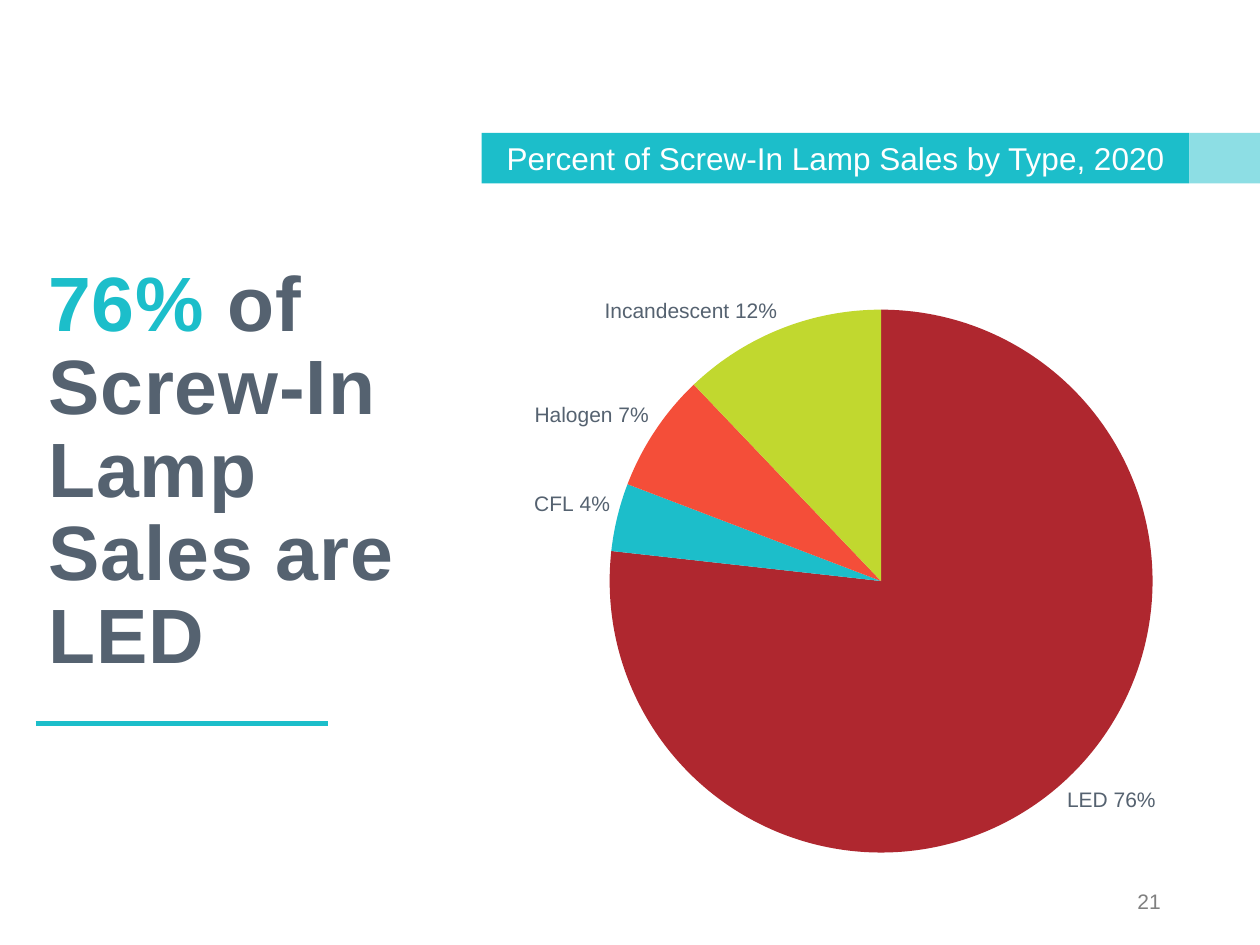
from lxml.etree import SubElement
from pptx import Presentation
from pptx.chart.data import CategoryChartData
from pptx.dml.color import RGBColor
from pptx.enum.chart import XL_CHART_TYPE, XL_LABEL_POSITION
from pptx.enum.shapes import MSO_CONNECTOR, MSO_SHAPE
from pptx.enum.text import MSO_ANCHOR, MSO_AUTO_SIZE, PP_ALIGN
from pptx.oxml import parse_xml
from pptx.oxml.ns import qn
from pptx.util import Cm, Pt

TEAL, SLATE, WHITE, GRAY, BLACK = "1CBECA", "556270", "FFFFFF", "808080", "000000"
LAMPS = [
    ("LED", 0.76, "AF272F"),
    ("CFL", 0.04, TEAL),
    ("Halogen", 0.07, "F44E39"),
    ("Incandescent", 0.12, "C1D82F"),
]


def color(value):
    return RGBColor.from_string(value)


def cm(*lengths):
    return [Cm(length) for length in lengths]


class Page:
    font = "Arial"

    def __init__(self, deck):
        self.slide = deck.slides.add_slide(deck.slide_layouts[5])
        self.shapes = self.slide.shapes

    def style(self, font, size, fill, bold=False):
        font.name, font.size, font.bold = self.font, Pt(size), bold
        font.color.rgb = color(fill)

    def span(self, para, text, size, fill, bold=False):
        span = para.add_run()
        span.text = text
        self.style(span.font, size, fill, bold)
        return span

    def frame(self, box, align):
        frame = box.text_frame
        frame.word_wrap = True
        frame.auto_size = MSO_AUTO_SIZE.NONE
        frame.vertical_anchor = MSO_ANCHOR.MIDDLE
        para = frame.paragraphs[0]
        para.alignment = align
        return para

    def title(self, place, parts):
        box = self.shapes.title
        box.left, box.top, box.width, box.height = cm(*place)
        para = self.frame(box, PP_ALIGN.LEFT)
        para.line_spacing = 0.9
        para.space_before = Pt(0)
        for text, fill in parts:
            span = self.span(para, text, 44, fill, bold=True)
            span._r.get_or_add_rPr().set("spc", "50")

    def bar(self, place, fill, text="", alpha=None):
        box = self.shapes.add_shape(MSO_SHAPE.RECTANGLE, *cm(*place))
        box.shadow.inherit = False
        box.fill.solid()
        box.fill.fore_color.rgb = color(fill)
        box.line.fill.background()
        if alpha is not None:
            tint = box._element.spPr.find(".//" + qn("a:srgbClr"))
            SubElement(tint, qn("a:alpha")).set("val", str(alpha * 1000))
        if text:
            self.span(self.frame(box, PP_ALIGN.CENTER), text, 18, WHITE)

    def rule(self, ends, fill, width):
        line = self.shapes.add_connector(MSO_CONNECTOR.STRAIGHT, *cm(*ends))
        line.line.color.rgb = color(fill)
        line.line.width = Pt(width)
        SubElement(line._element.spPr, qn("a:effectLst"))

    def text(self, place, text, size, fill, align):
        box = self.shapes.add_textbox(*cm(*place))
        self.span(self.frame(box, align), text, size, fill)

    def pie(self, place, rows, plot_area):
        data = CategoryChartData(number_format="0%")
        data.categories = [name for name, _, _ in rows]
        data.add_series("Series 1", [value for _, value, _ in rows])
        chart = self.shapes.add_chart(XL_CHART_TYPE.PIE, *cm(*place), data).chart
        chart.has_title = chart.has_legend = False
        self.style(chart.font, 10, BLACK)
        plot = chart.plots[0]
        plot.vary_by_categories = True
        plot.has_data_labels = False
        series = plot.series[0]
        labels = series.data_labels
        self.style(labels.font, 12, SLATE)
        labels.show_category_name = labels.show_value = True
        labels.number_format, labels.number_format_is_linked = "0%", False
        labels.position = XL_LABEL_POSITION.OUTSIDE_END

        # Slices and their labels
        for index, (name, value, fill) in enumerate(rows):
            point = series.points[index]
            point.format.fill.solid()
            point.format.fill.fore_color.rgb = color(fill)
            point.format.line.fill.background()
            label = point.data_label
            para = label.text_frame.paragraphs[0]
            self.span(para, f"{name} {value:.0%}", 12, SLATE)
            label.position = XL_LABEL_POSITION.OUTSIDE_END
        for shown in labels._element.iter(qn("c:showCatName")):
            shown.set("val", "1")

        # Fixed plot area, as fractions of the chart
        namespace = "http://schemas.openxmlformats.org/drawingml/2006/chart"
        settings = [("layoutTarget", "inner"), ("xMode", "edge"), ("yMode", "edge")]
        settings += zip("xywh", plot_area)
        items = "".join(f'<c:{tag} val="{value}"/>' for tag, value in settings)
        layout = parse_xml(
            f'<c:layout xmlns:c="{namespace}"><c:manualLayout>{items}'
            "</c:manualLayout></c:layout>"
        )
        area = chart._chartSpace.chart.plotArea
        for old in area.findall(qn("c:layout")):
            area.remove(old)
        area.insert(0, layout)


def main():
    deck = Presentation()
    deck.slide_width, deck.slide_height = cm(25.4, 19.05)
    page = Page(deck)

    # Lamp sales chart
    page.pie((6.38, 5.49, 21.89, 12.09), LAMPS, (0.27, 0.06, 0.5, 0.91))

    # Headline with its underline
    page.title((0.72, 4.35, 8.15, 10.36),
               [("76% ", TEAL), ("of Screw-In Lamp Sales are LED", SLATE)])
    page.rule((0.72, 14.58, 6.61, 14.58), TEAL, 3)

    # Chart heading band
    page.bar((9.71, 2.68, 14.27, 1.02), TEAL,
             "Percent of Screw-In Lamp Sales by Type, 2020")
    page.bar((23.98, 2.68, 1.42, 1.02), TEAL, alpha=50)

    # Page number
    page.text((17.93, 17.65, 5.72, 1.02), "21", 12, GRAY, PP_ALIGN.RIGHT)

    deck.save("out.pptx")


if __name__ == "__main__":
    main()
